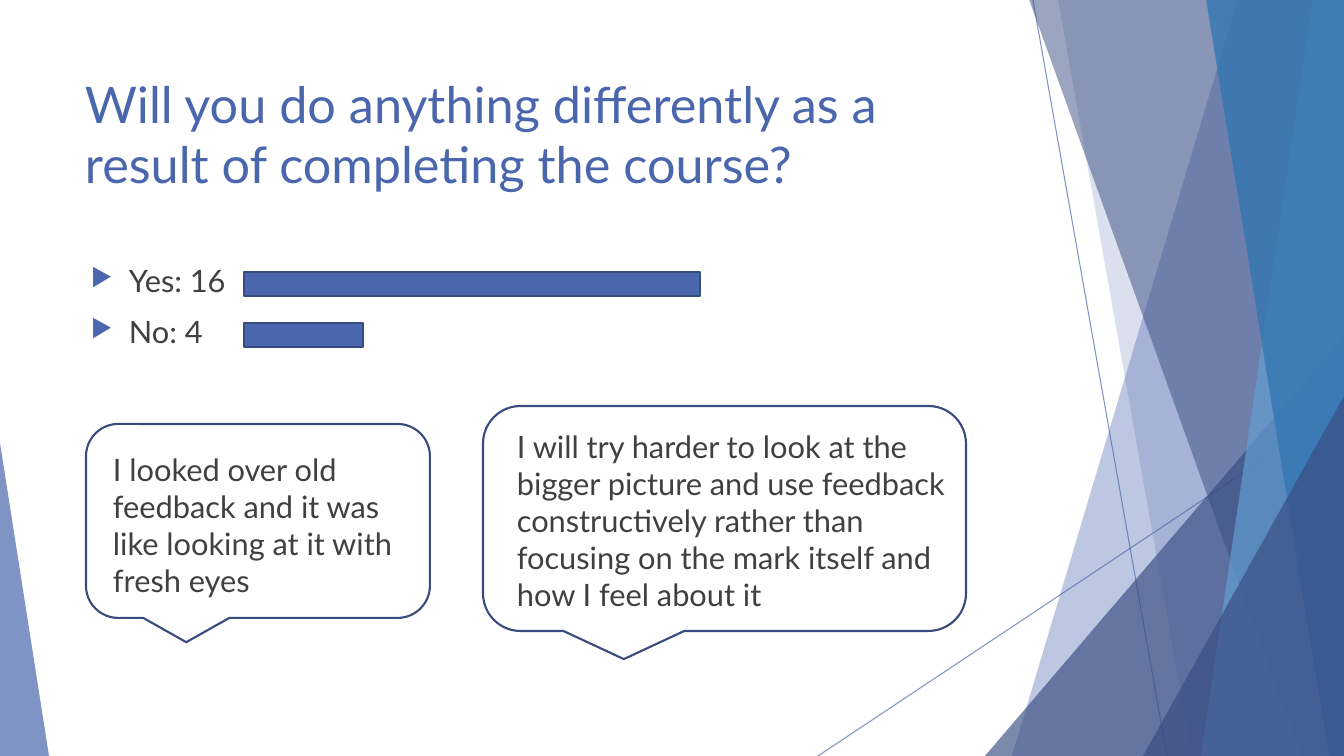
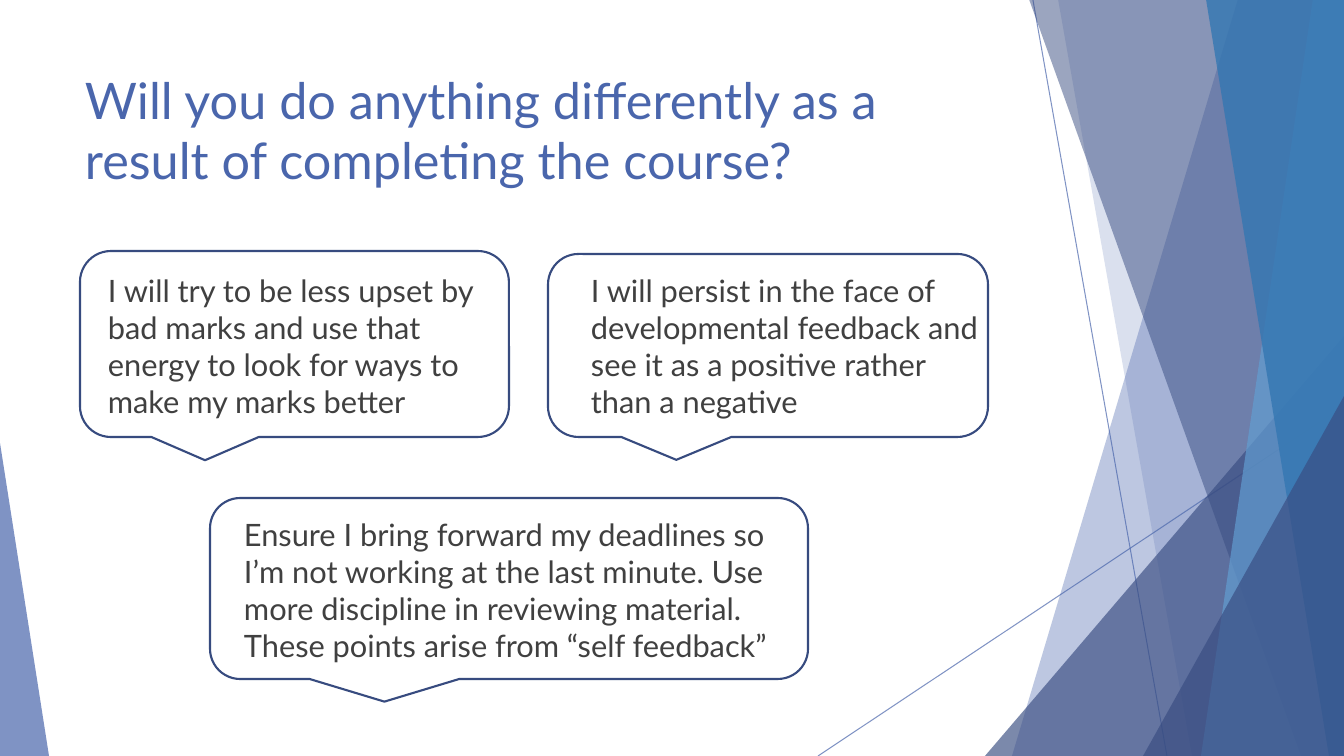
from dataclasses import dataclass

from lxml.etree import SubElement
from pptx import Presentation
from pptx.dml.color import RGBColor
from pptx.enum.shapes import MSO_CONNECTOR, MSO_SHAPE
from pptx.enum.text import MSO_ANCHOR
from pptx.oxml.ns import qn
from pptx.util import Emu, Pt

SLIDE_W, SLIDE_H = 1344, 756
SCALE = 12192000 / SLIDE_W  # EMU in one px


@dataclass(frozen=True)
class Theme:
    font: str = "Lato"
    title_size: int = 36
    body_size: int = 22
    accent: str = "4A66AC"
    accent_dark: str = "384C81"
    outline: str = "374B7F"
    sky: str = "629DD1"
    blue: str = "3477B2"
    text: str = "404040"


theme = Theme()

# Shared decoration, back to front
hairlines = [(1033, 0, 1167, SLIDE_H), (SLIDE_W, 406, 818, SLIDE_H)]
# "band": x at the top and at the bottom of its slanted left edge
# "triangle": left, top, width, height, position of the apex
facets = [
    ("band", (1238, 1012), theme.accent, 36),
    ("band", (1058, 1192), theme.accent, 20),
    ("triangle", (985, 336, 359, 420, 1), theme.accent_dark, 66),
    ("band", (1029, 1301), theme.accent_dark, 50),
    ("band", (1313, 1201), theme.sky, 70),
    ("band", (1206, 1329), theme.blue, 80),
    ("triangle", (1143, 396, 201, 360, 1), theme.accent_dark, 66),
    ("triangle", (0, 443, 49, 313, 0), theme.accent, 70),
]

title = "Will you do anything differently as a result of completing the course?"
BAR_LEFT, BAR_TOP, BAR_H, BAR_PITCH = 244, 272, 24, 51

# Answers: label and bar width. Quotes: callout box, text box, wording.
slides = [
    {
        "title_top": 68,
        "answers": [("Yes: 16", 456), ("No: 4", 119)],
        "quotes": [
            ((86, 424, 344, 194), (97, 446, 323, 185),
             "I looked over old feedback and it was like looking at it with fresh eyes"),
            ((483, 406, 483, 225), (501, 423, 456, 165),
             "I will try harder to look at the bigger picture and use feedback "
             "constructively rather than focusing on the mark itself and how I feel about it"),
        ],
    },
    {
        "title_top": 64,
        "answers": [],
        "quotes": [
            ((80, 251, 429, 186), (92, 267, 417, 236),
             "I will try to be less upset by bad marks and use that energy to look "
             "for ways to make my marks better"),
            ((548, 254, 440, 183), (575, 267, 426, 203),
             "I will persist in the face of developmental feedback and see it as a "
             "positive rather than a negative"),
            ((210, 498, 598, 181), (228, 511, 580, 155),
             "Ensure I bring forward my deadlines so I’m not working at the last minute. "
             "Use more discipline in reviewing material. These points arise from “self feedback”"),
        ],
    },
]


def px(*lengths):
    """Turn px lengths into a list of EMU."""
    return [Emu(round(n * SCALE)) for n in lengths]


def add_text(s, box, lines, size, color, inset=10):
    """Add a wrapped text box with one paragraph per line; return its paragraphs."""
    tf = s.shapes.add_textbox(*px(*box)).text_frame
    tf.word_wrap = True
    tf.vertical_anchor = MSO_ANCHOR.TOP
    tf.margin_left, tf.margin_right, tf.margin_top, tf.margin_bottom = px(inset, 10, 5, 5)
    tf.text = "\n".join(lines)
    for p in tf.paragraphs:
        for r in p.runs:
            r.font.name = theme.font
            r.font.size = Pt(size)
            r.font.color.rgb = RGBColor.from_string(color)
    return tf.paragraphs


prs = Presentation()
prs.slide_width, prs.slide_height = px(SLIDE_W, SLIDE_H)

for content in slides:
    s = prs.slides.add_slide(prs.slide_layouts[6])

    for ends in hairlines:
        line = s.shapes.add_connector(MSO_CONNECTOR.STRAIGHT, *px(*ends))
        line.line.width = Pt(0.75)
        line.line.color.rgb = RGBColor.from_string(theme.accent)
        spPr = line._element.spPr
        SubElement(spPr.find(".//" + qn("a:srgbClr")), qn("a:alpha"), val="70000")
        SubElement(spPr, qn("a:effectLst"))

    for kind, geometry, color, opacity in facets:
        if kind == "band":
            top_x, bottom_x = geometry
            builder = s.shapes.build_freeform(top_x, -1, scale=SCALE)
            builder.add_line_segments([(SLIDE_W, -1), (SLIDE_W, SLIDE_H), (bottom_x, SLIDE_H)])
            facet = builder.convert_to_shape()
        else:
            *box, apex = geometry
            facet = s.shapes.add_shape(MSO_SHAPE.ISOSCELES_TRIANGLE, *px(*box))
            facet.adjustments[0] = apex
        facet.shadow.inherit = False
        facet.line.fill.background()
        facet.fill.solid()
        facet.fill.fore_color.rgb = RGBColor.from_string(color)
        clr = facet._element.spPr.find(".//" + qn("a:srgbClr"))
        SubElement(clr, qn("a:alpha"), val=str(opacity * 1000))

    add_text(s, (75, content["title_top"], 948, 145), [title], theme.title_size, theme.accent)

    outlined = []
    if content["answers"]:
        labels = [label for label, _ in content["answers"]]
        for p in add_text(s, (75, 257, 993, 106), labels, theme.body_size, theme.text):
            p.space_before = Pt(10)
            pPr = p._p.get_or_add_pPr()
            margin, indent = px(44, -38)
            pPr.set("marL", str(margin))
            pPr.set("indent", str(indent))
            SubElement(SubElement(pPr, qn("a:buClr")), qn("a:srgbClr"), val=theme.accent)
            SubElement(pPr, qn("a:buSzPct"), val="80000")
            SubElement(pPr, qn("a:buChar"), char="▶")
        for i, (_, width) in enumerate(content["answers"]):
            bar_box = (BAR_LEFT, BAR_TOP + i * BAR_PITCH, width, BAR_H)
            outlined.append((MSO_SHAPE.RECTANGLE, bar_box, True))

    for callout_box, text_box, quote in content["quotes"]:
        outlined.append((MSO_SHAPE.ROUNDED_RECTANGULAR_CALLOUT, callout_box, False))
        add_text(s, text_box, [quote], theme.body_size, theme.text, inset=16)

    for preset, box, filled in outlined:
        shape = s.shapes.add_shape(preset, *px(*box))
        shape.shadow.inherit = False
        shape.line.width = Pt(1.5)
        shape.line.color.rgb = RGBColor.from_string(theme.outline)
        if filled:
            shape.fill.solid()
            shape.fill.fore_color.rgb = RGBColor.from_string(theme.accent)
        else:
            shape.fill.background()

prs.save("out.pptx")
